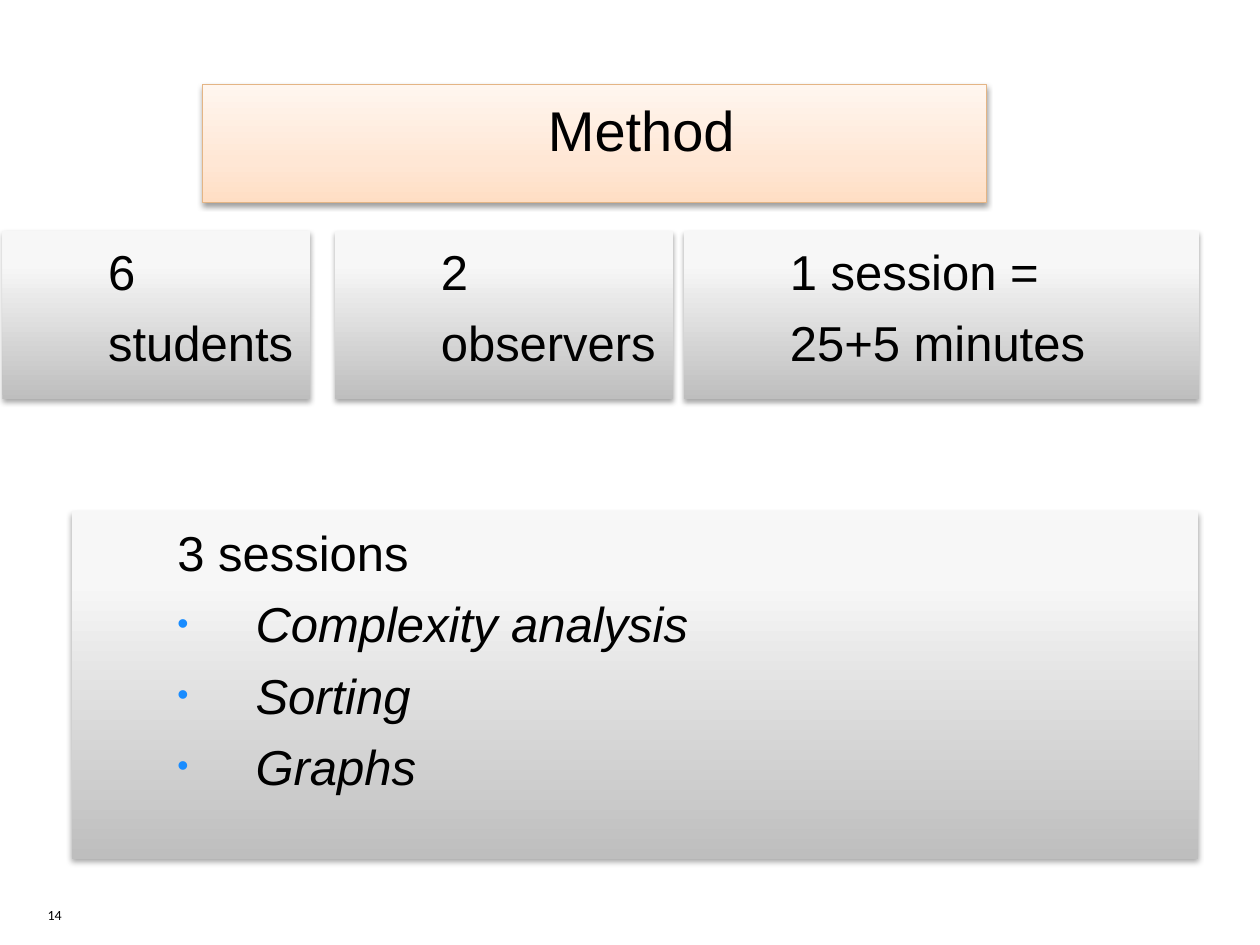
import pptx
import pptx.util
import pptx.dml.color
import pptx.enum.shapes
import pptx.enum.text
import pptx.oxml
import pptx.oxml.ns
from pptx.util import Inches, Pt

THEME = {
    "ink": "000000", "bullet": "198CFF", "font": "Arial", "number_font": "Calibri",
    "title_size": 32, "body_size": 28, "number_size": 8,
    "peach": {"stops": [(0, "FFDEC4"), (35, "FFE7D5"), (100, "FFF6EF")],
              "line": "E4B585", "shadow_alpha": 38, "shadow_distance": 1.6},
    "gray": {"stops": [(0, "BEBEBE"), (80, "F7F7F7"), (100, "F8F8F8")],
             "line": None, "shadow_alpha": 35, "shadow_distance": 1.8},
}

TITLE = ("Method", (1.61, 0.67, 6.22, 0.94))
FACT_TOP, FACT_HEIGHT = 1.83, 1.34
FACTS = [  # left, width, lines
    (0.02, 2.44, ["6", "students"]),
    (2.66, 2.68, ["2", "observers"]),
    (5.43, 4.09, ["1 session =", "25+5 minutes"]),
]
SESSIONS = ("3 sessions", ["Complexity analysis", "Sorting", "Graphs"],
            (0.57, 4.06, 8.94, 2.76))
PAGE_NUMBER = ("14", (0.28, 7.14, 0.34, 0.24))


def color(value):
    return pptx.dml.color.RGBColor.from_string(value)


def append_xml(parent, tag, attributes, content=""):
    namespace = pptx.oxml.ns.nsdecls("a")
    parent.append(pptx.oxml.parse_xml(f"<a:{tag} {namespace} {attributes}>{content}</a:{tag}>"))


def add_text(frame, text, size=THEME["body_size"], font=THEME["font"], italic=None,
             bullet=False, margin=0, indent=0, align=None):
    """Write text into the empty first paragraph, or into a new one after it."""
    para = frame.paragraphs[0]
    if para.runs:
        para = frame.add_paragraph()
        para.space_before = Pt(7)
    para.alignment = align
    properties = para._p.get_or_add_pPr()
    properties.set("marL", str(Inches(margin)))
    properties.set("indent", str(Inches(indent)))
    if bullet:
        append_xml(properties, "buClr", "", f'<a:srgbClr val="{THEME["bullet"]}"/>')
        append_xml(properties, "buSzPct", 'val="65000"')
        append_xml(properties, "buFont", 'typeface="Arial"')
        append_xml(properties, "buChar", 'char="•"')
    span = para.add_run()
    span.text = text
    span.font.size, span.font.name, span.font.italic = Pt(size), font, italic
    span.font.color.rgb = color(THEME["ink"])


def add_panel(page, place, style):
    """Add a rectangle with a vertical gradient and a soft shadow; return its text frame."""
    box = page.shapes.add_shape(pptx.enum.shapes.MSO_SHAPE.RECTANGLE, *map(Inches, place))
    box.fill.gradient()
    box.fill.gradient_angle = 90
    stops = box._element.spPr.find(".//" + pptx.oxml.ns.qn("a:gsLst"))
    for stop in list(stops):
        stops.remove(stop)
    for position, value in style["stops"]:
        append_xml(stops, "gs", f'pos="{position * 1000}"', f'<a:srgbClr val="{value}"/>')
    if style["line"]:
        box.line.color.rgb = color(style["line"])
        box.line.width = Pt(0.75)
    else:
        box.line.fill.background()
    box.shadow.inherit = False
    effects = box._element.spPr.find(pptx.oxml.ns.qn("a:effectLst"))
    append_xml(effects, "outerShdw",
               f'blurRad="{Pt(3.1)}" dist="{Pt(style["shadow_distance"])}" '
               'dir="5400000" rotWithShape="0"',
               f'<a:srgbClr val="000000"><a:alpha val="{style["shadow_alpha"] * 1000}"/></a:srgbClr>')
    frame = box.text_frame
    frame.word_wrap = True
    frame.vertical_anchor = pptx.enum.text.MSO_ANCHOR.TOP
    frame.margin_top = Inches(0.09)
    return frame


def main():
    deck = pptx.Presentation()
    deck.slide_width, deck.slide_height = Inches(10), Inches(7.5)
    page = deck.slides.add_slide(deck.slide_layouts[6])
    left = pptx.enum.text.PP_ALIGN.LEFT
    plain = {"margin": 1.12, "indent": -0.38, "align": left}

    text, place = PAGE_NUMBER
    number = page.shapes.add_textbox(*map(Inches, place)).text_frame
    number.word_wrap = True
    number.vertical_anchor = pptx.enum.text.MSO_ANCHOR.BOTTOM
    add_text(number, text, size=THEME["number_size"], font=THEME["number_font"])

    text, place = TITLE
    add_text(add_panel(page, place, THEME["peach"]), text, size=THEME["title_size"],
             **{**plain, "align": pptx.enum.text.PP_ALIGN.CENTER})

    for start, width, lines in FACTS:
        frame = add_panel(page, (start, FACT_TOP, width, FACT_HEIGHT), THEME["gray"])
        for line in lines:
            add_text(frame, line, **plain)

    heading, topics, place = SESSIONS
    frame = add_panel(page, place, THEME["gray"])
    add_text(frame, heading, **plain)
    for topic in topics:
        add_text(frame, topic, italic=True, bullet=True, margin=1.36, indent=-0.62, align=left)

    deck.save("out.pptx")


if __name__ == "__main__":
    main()
